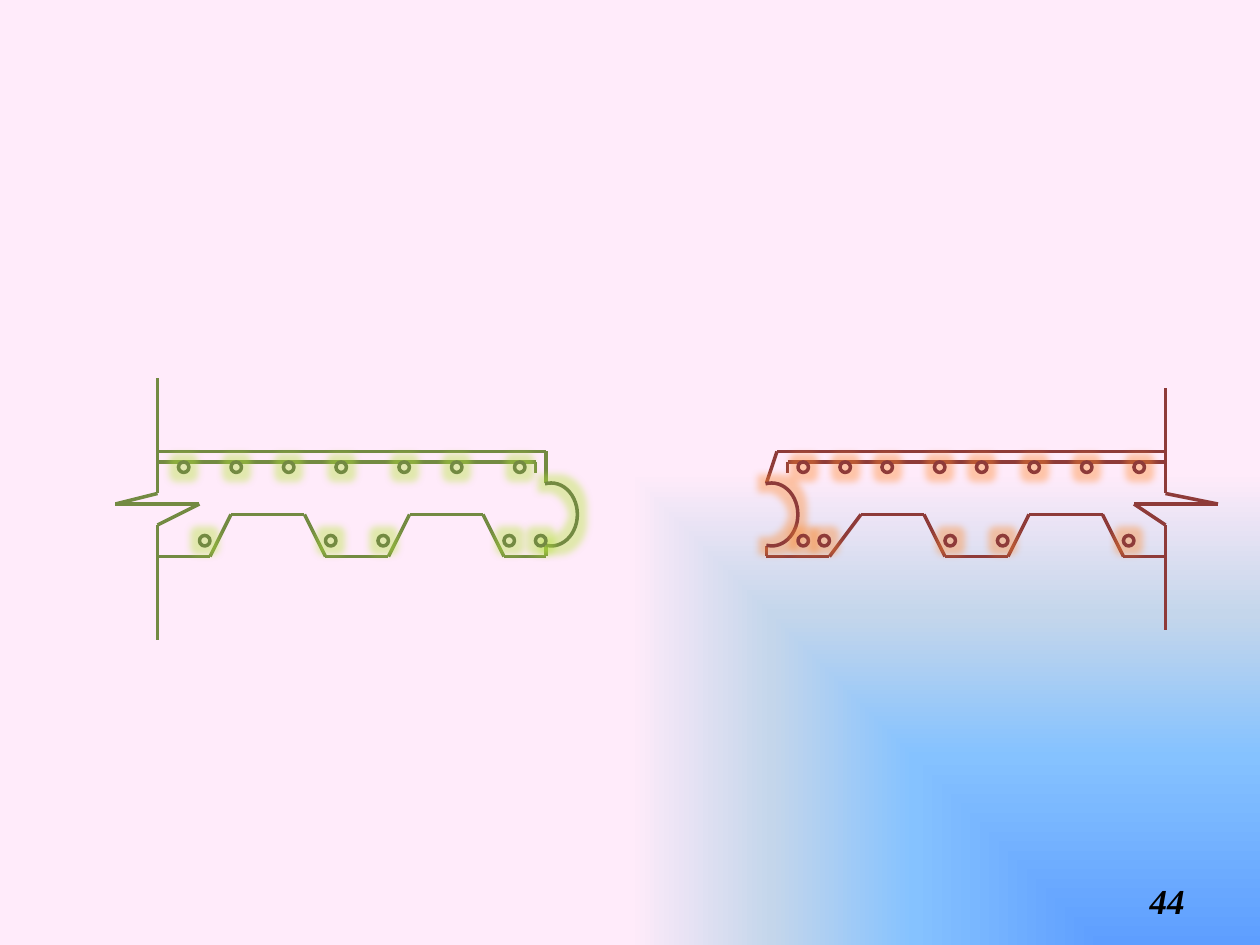
import pptx
import pptx.dml.color
import pptx.enum.shapes
import pptx.enum.text
import pptx.oxml
import pptx.oxml.ns
import pptx.util
from itertools import pairwise

PX = 9525  # EMU, 96 px to the inch
GREEN, GREEN_GLOW = "738A42", "B5E53A"
RED, RED_GLOW = "8E3B39", "FF8A2E"
BAR_SIZE = 8
TOP_BARS_Y, BOTTOM_BARS_Y = 352, 408
BACKGROUND_STOPS = [(0, "5E9EFF"), (40, "85C2FF"), (70, "C4D6EB"), (100, "FFEBFA")]


def px(*lengths):
    return [pptx.util.Emu(length * PX) for length in lengths]


def color(hex_string):
    return pptx.dml.color.RGBColor.from_string(hex_string)


def xml(tag, content="", attributes=""):
    namespace = pptx.oxml.ns.nsdecls("a")
    return pptx.oxml.parse_xml(f"<a:{tag} {namespace} {attributes}>{content}</a:{tag}>")


def set_background(slide):
    """Shade the slide from its bottom right corner."""
    slide.background.fill.solid()
    solid = slide.background._cSld.find(".//" + pptx.oxml.ns.qn("a:solidFill"))
    stops = "".join(
        f'<a:gs pos="{position * 1000}"><a:srgbClr val="{value}"/></a:gs>'
        for position, value in BACKGROUND_STOPS
    )
    gradient = xml(
        "gradFill",
        f'<a:gsLst>{stops}</a:gsLst><a:path path="rect">'
        '<a:fillToRect l="100000" t="100000"/></a:path>',
        'rotWithShape="1"',
    )
    solid.getparent().replace(solid, gradient)


def style_line(shape, line_color):
    shape.line.color.rgb = color(line_color)
    shape.line.width = pptx.util.Pt(2)


def add_path(slide, points, line_color):
    """Join successive points with straight connectors."""
    for start, end in pairwise(points):
        connector = slide.shapes.add_connector(
            pptx.enum.shapes.MSO_CONNECTOR.STRAIGHT, *px(*start, *end)
        )
        style_line(connector, line_color)
        connector._element.spPr.append(xml("effectLst"))


def add_glowing_shape(slide, kind, box, line_color, glow_color):
    shape = slide.shapes.add_shape(kind, *px(*box))
    shape.fill.background()
    style_line(shape, line_color)
    shape.shadow.inherit = False
    effects = shape._element.spPr.find(pptx.oxml.ns.qn("a:effectLst"))
    effects.append(xml(
        "glow",
        f'<a:srgbClr val="{glow_color}"><a:alpha val="40000"/></a:srgbClr>',
        'rad="101600"',
    ))
    return shape


def add_bars(slide, lefts, top, line_color, glow_color):
    """Draw a row of reinforcement bars in cross section."""
    for left in lefts:
        add_glowing_shape(
            slide, pptx.enum.shapes.MSO_SHAPE.OVAL,
            (left, top, BAR_SIZE, BAR_SIZE), line_color, glow_color,
        )


def add_joint(slide, left, line_color, glow_color):
    """Draw the rounded joint at the end of a slab."""
    arc = add_glowing_shape(
        slide, pptx.enum.shapes.MSO_SHAPE.ARC, (left, 368, 40, 48), line_color, glow_color
    )
    arc.adjustments[0] = 155.231
    arc.adjustments[1] = 59.837


def add_slab(slide, paths, joint_left, top_bars, bottom_bars, line_color, glow_color):
    for points in paths:
        add_path(slide, points, line_color)
    add_joint(slide, joint_left, line_color, glow_color)
    add_bars(slide, top_bars, TOP_BARS_Y, line_color, glow_color)
    add_bars(slide, bottom_bars, BOTTOM_BARS_Y, line_color, glow_color)


def add_page_number(slide, text):
    box = slide.shapes.add_textbox(*px(688, 667, 224, 38))
    frame = box.text_frame
    frame.word_wrap = True
    frame.vertical_anchor = pptx.enum.text.MSO_ANCHOR.MIDDLE
    paragraph = frame.paragraphs[0]
    paragraph.alignment = pptx.enum.text.PP_ALIGN.RIGHT
    run = paragraph.add_run()
    run.text = text
    run.font.name = "Times New Roman"
    run.font.size = pptx.util.Pt(20)
    run.font.bold = run.font.italic = True
    run.font.color.rgb = color("000000")


def main():
    presentation = pptx.Presentation()
    presentation.slide_width, presentation.slide_height = px(960, 720)
    slide = presentation.slides.add_slide(presentation.slide_layouts[6])
    set_background(slide)

    left_top = [(120, 344), (416, 344), (416, 368)]
    left_deck = [(120, 424), (160, 424), (176, 392), (232, 392), (248, 424), (296, 424),
                 (312, 392), (368, 392), (384, 424), (416, 424), (416, 416)]
    left_mesh = [(120, 352), (408, 352), (408, 360)]
    left_break = [(120, 288), (120, 376), (88, 384), (152, 384), (120, 400), (120, 488)]
    add_slab(
        slide, [left_top, left_deck, left_mesh, left_break], 400,
        [136, 176, 216, 256, 304, 344, 392], [152, 248, 288, 384, 408],
        GREEN, GREEN_GLOW,
    )

    right_top = [(888, 344), (592, 344), (584, 368)]
    right_deck = [(584, 416), (584, 424), (632, 424), (656, 392), (704, 392), (720, 424),
                  (768, 424), (784, 392), (840, 392), (856, 424), (888, 424)]
    right_mesh = [(888, 352), (600, 352), (600, 360)]
    right_break = [(888, 296), (888, 376), (928, 384), (864, 384), (888, 400), (888, 480)]
    add_slab(
        slide, [right_top, right_deck, right_mesh, right_break], 568,
        [608, 640, 672, 712, 744, 784, 824, 864], [608, 624, 720, 760, 856],
        RED, RED_GLOW,
    )

    add_page_number(slide, "44")
    presentation.save("out.pptx")


if __name__ == "__main__":
    main()
